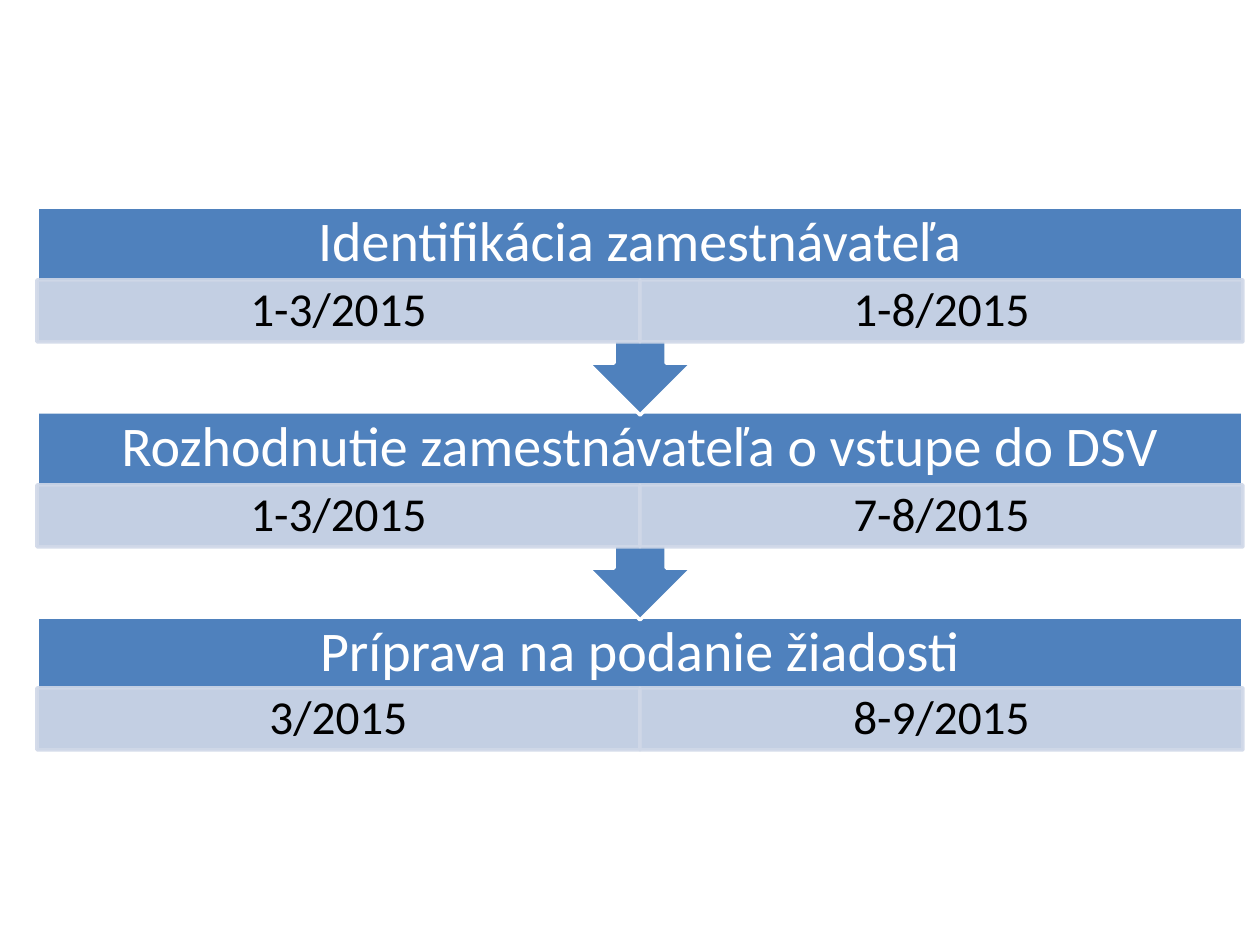
from dataclasses import dataclass

from lxml.etree import SubElement
from pptx import Presentation
from pptx.dml.color import RGBColor
from pptx.enum.shapes import MSO_SHAPE as Preset
from pptx.enum.text import MSO_ANCHOR as Anchor, PP_ALIGN as Align
from pptx.oxml.ns import qn
from pptx.util import Inches, Pt

EMU_PER_PX = 914400 / 126
COLORS = {"step": "4F81BD", "date": "D0D8E8", "white": "FFFFFF", "black": "000000"}
LEFT, TOP, WIDTH = 37, 207, 1206
STEP_GAP, CALLOUT_HEIGHT, LAST_HEIGHT = 205, 208, 135
HEADING_HEIGHT, DATE_HEIGHT = 73, 62


@dataclass(frozen=True)
class Step:
    heading: str
    dates: tuple[str, str]
    preset: Preset = Preset.UP_ARROW_CALLOUT
    height: int = CALLOUT_HEIGHT
    rotation: int = 180
    date_offset: int = HEADING_HEIGHT


STEPS = (
    Step("Identifikácia zamestnávateľa", ("1-3/2015", "1-8/2015")),
    Step("Rozhodnutie zamestnávateľa o vstupe do DSV", ("1-3/2015", "7-8/2015")),
    Step("Príprava na podanie žiadosti", ("3/2015", "8-9/2015"),
         Preset.RECTANGLE, LAST_HEIGHT, 0, 71),
)


def px(length: int) -> int:
    return round(length * EMU_PER_PX)


def box(*lengths: int) -> list[int]:
    return [px(length) for length in lengths]


def rgb(name: str) -> RGBColor:
    return RGBColor.from_string(COLORS[name])


def add_block(slide, preset: Preset, bounds: list[int], fill: str, line: str):
    block = slide.shapes.add_shape(preset, *bounds)
    block.shadow.inherit = False
    block.fill.solid()
    block.fill.fore_color.rgb = rgb(fill)
    block.line.color.rgb = rgb(line)
    block.line.width = Pt(2)
    return block


def set_alpha(block, percent: int) -> None:
    for color in block._element.spPr.iter(qn("a:srgbClr")):
        SubElement(color, qn("a:alpha")).set("val", str(percent * 1000))


def write(target, text: str, size: int, color: str, side: int, edge: int) -> None:
    frame = target.text_frame
    frame.word_wrap = True
    frame.vertical_anchor = Anchor.MIDDLE
    frame.margin_left = frame.margin_right = px(side)
    frame.margin_top = frame.margin_bottom = px(edge)
    frame.text = text
    paragraph = frame.paragraphs[0]
    paragraph.alignment = Align.CENTER
    paragraph.line_spacing = 0.9
    font = paragraph.runs[0].font
    font.name = "Calibri"
    font.size = Pt(size)
    font.color.rgb = rgb(color)


def add_step(slide, step: Step, top: int) -> None:
    body = add_block(slide, step.preset, box(LEFT, top, WIDTH, step.height), "step", "white")
    body.rotation = step.rotation
    heading = slide.shapes.add_textbox(*box(LEFT, top, WIDTH, HEADING_HEIGHT))
    write(heading, step.heading, 32, "white", 32, 32)
    date_width = WIDTH // len(step.dates)
    for column, date in enumerate(step.dates):
        bounds = box(LEFT + column * date_width, top + step.date_offset, date_width, DATE_HEIGHT)
        cell = add_block(slide, Preset.RECTANGLE, bounds, "date", "date")
        set_alpha(cell, 90)
        write(cell, date, 27, "black", 26, 5)


def main() -> None:
    deck = Presentation()
    deck.slide_width, deck.slide_height = Inches(10), Inches(7.5)
    slide = deck.slides.add_slide(deck.slide_layouts[6])
    for index, step in reversed(list(enumerate(STEPS))):
        add_step(slide, step, TOP + index * STEP_GAP)
    deck.save("out.pptx")


if __name__ == "__main__":
    main()
